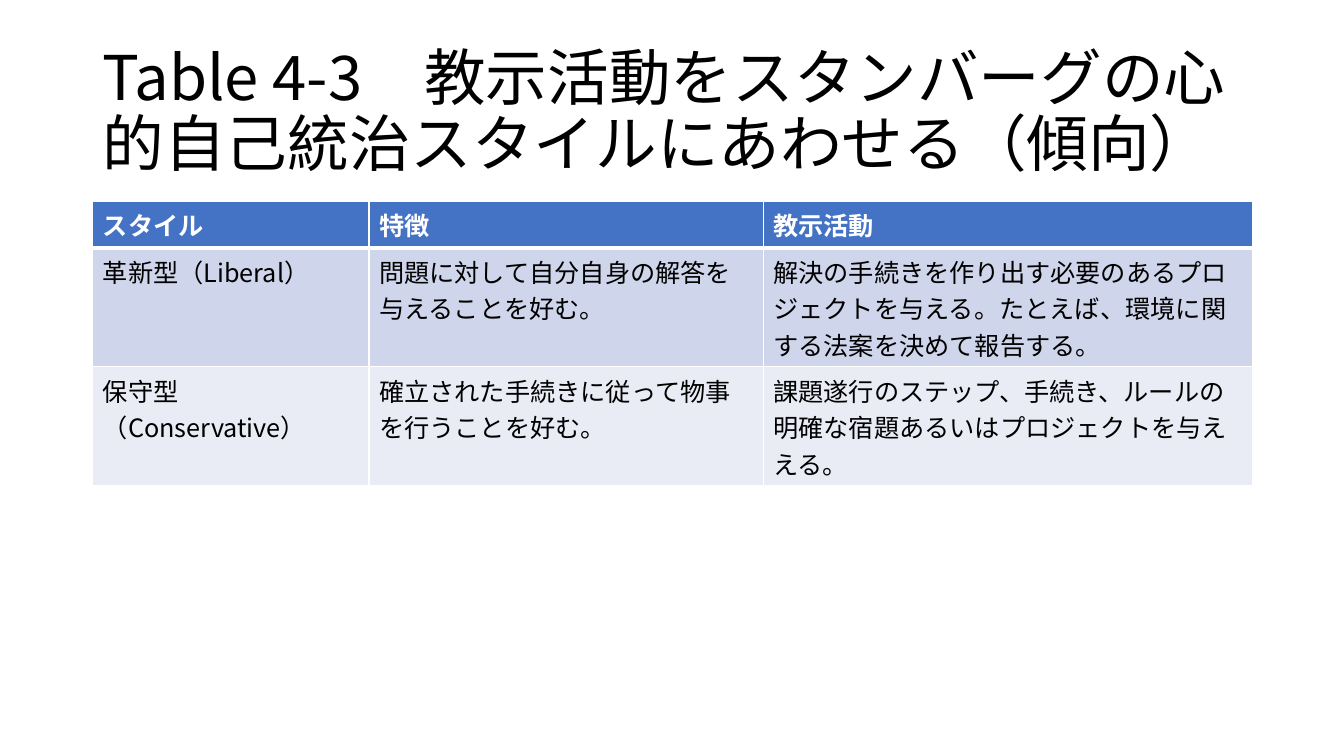
from lxml.etree import SubElement
from pptx import Presentation
from pptx.dml.color import RGBColor
from pptx.enum.text import MSO_ANCHOR
from pptx.oxml.ns import qn
from pptx.util import Inches, Pt

FONT = "Noto Sans CJK JP"


def rgb(value):
    return RGBColor.from_string(value)


def add_text(tf, text, color, **fmt):
    r = tf.paragraphs[0].add_run()
    r.text = text
    for name, value in {"name": FONT, **fmt}.items():
        setattr(r.font, name, value)
    r.font.color.rgb = rgb(color)
    # East Asian typeface
    SubElement(r.font._element, qn("a:ea"), typeface=FONT)


prs = Presentation()
prs.slide_width, prs.slide_height = Inches(13.33), Inches(7.5)
s = prs.slides.add_slide(prs.slide_layouts[6])

# Title
sp = s.shapes.add_textbox(Inches(0.92), Inches(0.4), Inches(11.5), Inches(1.45))
tf = sp.text_frame
tf.word_wrap = True
tf.vertical_anchor = MSO_ANCHOR.MIDDLE
tf.paragraphs[0].line_spacing = 0.9
add_text(tf, "Table 4-3　教示活動をスタンバーグの心的自己統治スタイルにあわせる（傾向）",
         "000000", size=Pt(44))

# Table
rows = [
    ("スタイル", "特徴", "教示活動"),
    ("革新型（Liberal）", "問題に対して自分自身の解答を与えることを好む。",
     "解決の手続きを作り出す必要のあるプロジェクトを与える。たとえば、環境に関する法案を決めて報告する。"),
    ("保守型（Conservative）", "確立された手続きに従って物事を行うことを好む。",
     "課題遂行のステップ、手続き、ルールの明確な宿題あるいはプロジェクトを与ええる。"),
]
row_fills = ["4472C4", "CFD5EA", "E9EBF5"]
row_heights = [0.46, 1.18, 1.18]
col_widths = [2.74, 3.91, 4.85]

table = s.shapes.add_table(len(rows), len(col_widths), Inches(0.92), Inches(2),
                           Inches(sum(col_widths)), Inches(sum(row_heights))).table
for column, width in zip(table.columns, col_widths):
    column.width = Inches(width)
for i, (texts, fill, height) in enumerate(zip(rows, row_fills, row_heights)):
    table.rows[i].height = Inches(height)
    header = i == 0
    # White rules, thicker between the header and the body
    rules = {"lnL": 1, "lnR": 1, "lnT": 3 if i == 1 else 1, "lnB": 3 if header else 1}
    for cell, text in zip(table.rows[i].cells, texts):
        tcPr = cell._tc.get_or_add_tcPr()
        for side, weight in rules.items():
            line = SubElement(tcPr, qn(f"a:{side}"), w=str(Pt(weight)))
            SubElement(SubElement(line, qn("a:solidFill")), qn("a:srgbClr"), val="FFFFFF")
        cell.fill.solid()
        cell.fill.fore_color.rgb = rgb(fill)
        add_text(cell.text_frame, text, "FFFFFF" if header else "000000",
                 size=Pt(18), bold=header)

prs.save("out.pptx")
